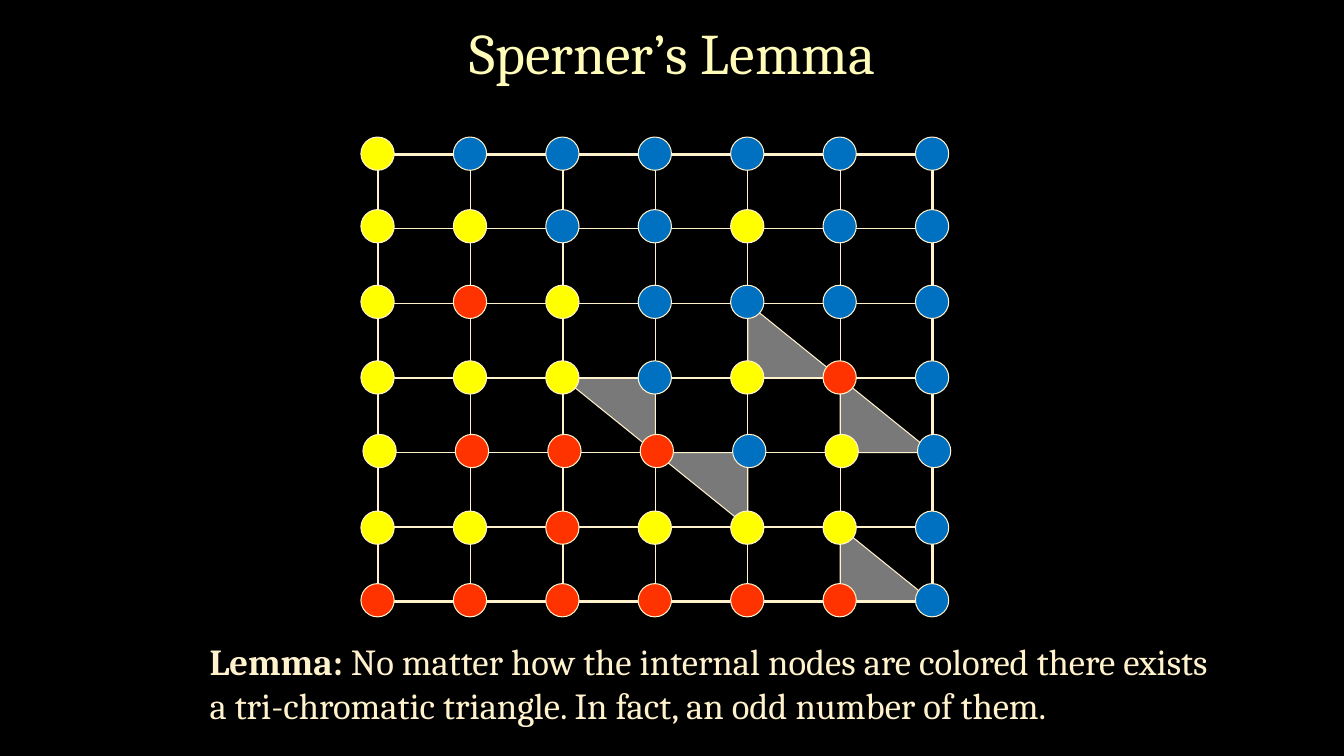
from lxml import etree
from pptx import Presentation
from pptx.dml.color import RGBColor
from pptx.enum import shapes, text
from pptx.oxml.ns import qn
from pptx.util import Inches, Pt

BLACK = RGBColor(0x00, 0x00, 0x00)
CREAM = RGBColor(0xFF, 0xF2, 0xCC)
TITLE_YELLOW = RGBColor(0xFF, 0xFC, 0xB9)
GREY = RGBColor(0xE7, 0xE6, 0xE6)
NODE_COLORS = {
    "Y": RGBColor(0xFF, 0xFF, 0x00),
    "B": RGBColor(0x00, 0x70, 0xC0),
    "R": RGBColor(0xFF, 0x33, 0x00),
}
FONT = "Cambria"

CELLS = 6
GRID = (3.75, 1.53, 5.5, 4.44)
NODE_SIZE = 0.33
# Left and top of each row of nodes, and their colours
NODE_ROWS = [
    (3.58, 1.36, "YBBBBBB"),
    (3.58, 2.08, "YYBBYBB"),
    (3.58, 2.83, "YRYBBBB"),
    (3.58, 3.58, "YYYBYRB"),
    (3.6, 4.31, "YRRRBYB"),
    (3.58, 5.07, "YYRYYYB"),
    (3.58, 5.79, "RRRRRRB"),
]
# Row and column of the grid cell, rotation
TRIANGLES = [(5, 5, 0), (3, 5, 0), (4, 3, 180), (2, 4, 0), (3, 2, 180)]


def add_outlined(s, kind, left, top, width, height, color):
    sp = s.shapes.add_shape(kind, Inches(left), Inches(top),
                            Inches(width), Inches(height))
    sp.shadow.inherit = False
    sp.fill.solid()
    sp.fill.fore_color.rgb = color
    sp.line.color.rgb = CREAM
    sp.line.width = Pt(0.75)
    return sp


def add_triangles(s, left, top, width, height):
    """Shade the tri-chromatic half cells of the grid in the given box."""
    dx, dy = width / CELLS, height / CELLS
    for row, col, rotation in TRIANGLES:
        sp = add_outlined(s, shapes.MSO_SHAPE.RIGHT_TRIANGLE,
                          left + col * dx, top + row * dy, dx, dy, GREY)
        sp.rotation = rotation
        color = sp.fill._xPr.find(qn("a:solidFill"))[0]
        etree.SubElement(color, qn("a:alpha"), val="53000")


def set_borders(cell, widths):
    tcPr = cell._tc.get_or_add_tcPr()
    for side, width in zip("LRTB", widths):
        ln = etree.SubElement(tcPr, qn(f"a:ln{side}"), w=str(Pt(width)))
        fill = etree.SubElement(ln, qn("a:solidFill"))
        etree.SubElement(fill, qn("a:srgbClr"), val=str(CREAM))


def add_grid(s, left, top, width, height):
    table = s.shapes.add_table(CELLS, CELLS, Inches(left), Inches(top),
                               Inches(width), Inches(height)).table
    table.first_row = table.horz_banding = False
    last = CELLS - 1
    for row in range(CELLS):
        for col in range(CELLS):
            cell = table.cell(row, col)
            outer = (col == 0, col == last, row == 0, row == last)
            set_borders(cell, [2.25 if edge else 1 for edge in outer])
            cell.fill.background()


def add_nodes(s, step):
    for left, top, colors in NODE_ROWS:
        for col, key in enumerate(colors):
            add_outlined(s, shapes.MSO_SHAPE.OVAL, left + col * step, top,
                         NODE_SIZE, NODE_SIZE, NODE_COLORS[key])


def add_title(s, left, top, width, height):
    sp = s.shapes.title
    sp.left, sp.top = Inches(left), Inches(top)
    sp.width, sp.height = Inches(width), Inches(height)
    tf = sp.text_frame
    tf.text = "Sperner’s Lemma"
    tf.vertical_anchor = text.MSO_ANCHOR.MIDDLE
    p = tf.paragraphs[0]
    p.alignment = text.PP_ALIGN.CENTER
    p.line_spacing = 0.9
    p.font.name, p.font.size = FONT, Pt(41)
    p.font.color.rgb = TITLE_YELLOW


def add_lemma(s, left, top, width, height):
    sp = s.shapes.add_textbox(Inches(left), Inches(top),
                              Inches(width), Inches(height))
    tf = sp.text_frame
    tf.word_wrap = True
    p = tf.paragraphs[0]
    p.font.name, p.font.size = FONT, Pt(26.2)
    p.font.color.rgb = CREAM
    r = p.add_run()
    r.text = "Lemma:"
    r.font.bold = True
    p.add_run().text = (" No matter how the internal nodes are colored there "
                        "exists a tri-chromatic triangle. In fact, an odd "
                        "number of them.")


def main():
    prs = Presentation()
    prs.slide_width, prs.slide_height = Inches(13.33), Inches(7.5)
    s = prs.slides.add_slide(prs.slide_layouts[5])
    s.background.fill.solid()
    s.background.fill.fore_color.rgb = BLACK
    add_triangles(s, *GRID)
    add_grid(s, *GRID)
    add_nodes(s, GRID[2] / CELLS)
    add_title(s, 0.92, -0.17, 11.5, 1.45)
    add_lemma(s, 1.98, 6.29, 10.25, 0.98)
    prs.save("out.pptx")


if __name__ == "__main__":
    main()
